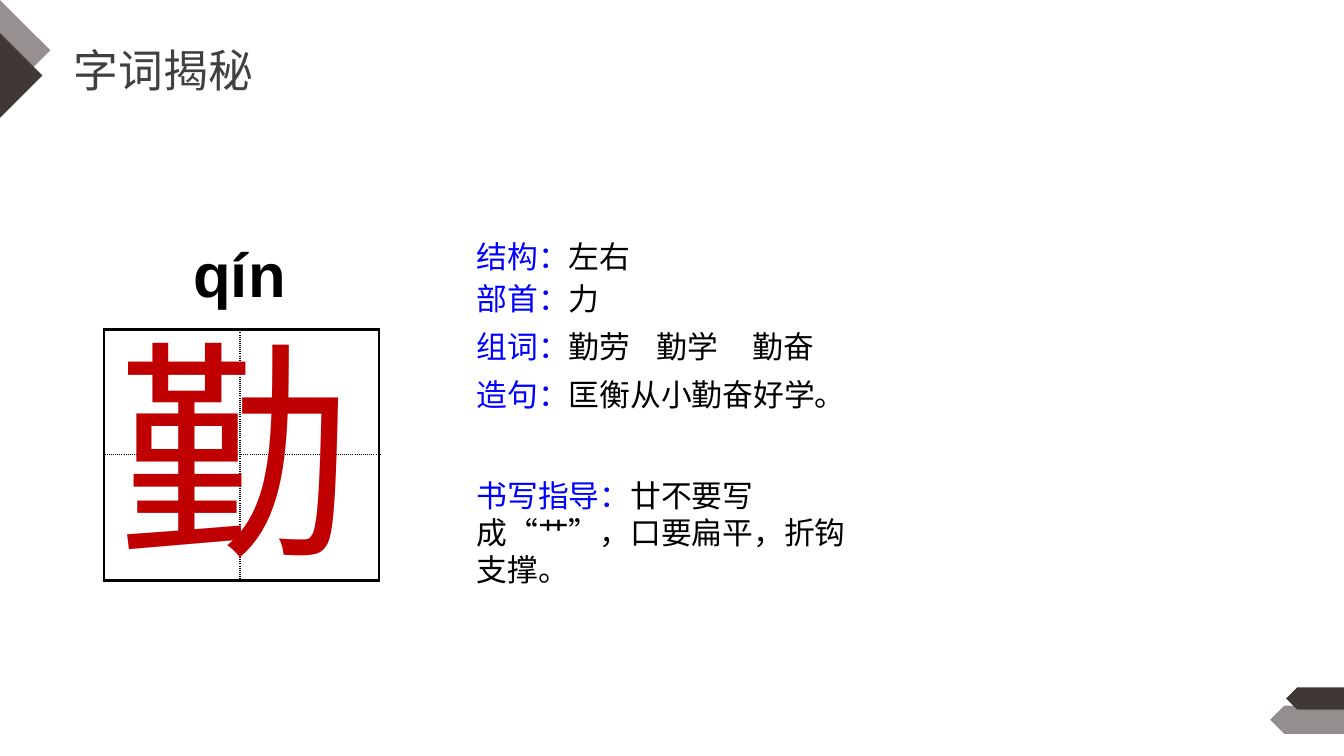
from lxml import etree
from pptx import Presentation, util as u
from pptx.dml.color import RGBColor
from pptx.enum import shapes, text
from pptx.oxml.ns import qn

DARK, GREY, BLUE, BLACK, RED = "403836", "404040", "0000FF", "000000", "C00000"


def colour(value):
    return RGBColor.from_string(value)


class Board:
    """Places elements on one slide; every length is a percentage of the slide's size."""

    font = "Arial"

    def __init__(self, presentation):
        self.width, self.height = presentation.slide_width, presentation.slide_height
        self.slide = presentation.slides.add_slide(presentation.slide_layouts[5])
        self.shapes = self.slide.shapes

    def x(self, share):
        return u.Emu(round(self.width * share / 100))

    def y(self, share):
        return u.Emu(round(self.height * share / 100))

    def box(self, left, top, width, height):
        return self.x(left), self.y(top), self.x(width), self.y(height)

    def paint(self, shape, fill, opacity=100):
        shape.shadow.inherit = False
        shape.fill.solid()
        shape.fill.fore_color.rgb = colour(fill)
        shape.line.fill.background()
        if opacity < 100:
            tone = shape.fill._xPr.find(".//" + qn("a:srgbClr"))
            etree.SubElement(tone, qn("a:alpha"), val=str(opacity * 1000))

    def ribbon(self, box, opacity=100):
        shape = self.shapes.add_shape(shapes.MSO_SHAPE.PENTAGON, *self.box(*box))
        shape.rotation = 180
        self.paint(shape, DARK, opacity)

    def corner(self, top, width, height, opacity=100):
        """Triangle on the left edge, pointing right."""
        builder = self.shapes.build_freeform(0, self.y(top + height))
        builder.add_line_segments(
            [(0, self.y(top)), (self.x(width), self.y(top + height / 2))], close=True)
        self.paint(builder.convert_to_shape(), DARK, opacity)

    def set_text(self, shape, runs, size, bold=False, wrap=True):
        """Fill a shape with one paragraph of (wording, colour) runs."""
        frame = shape.text_frame
        frame.word_wrap = wrap
        frame.vertical_anchor = text.MSO_ANCHOR.TOP
        paragraph = frame.paragraphs[0]
        paragraph.alignment = text.PP_ALIGN.LEFT
        font = paragraph.font
        font.name, font.size, font.bold = self.font, u.Pt(size), bold
        for wording, tone in runs:
            run = paragraph.add_run()
            run.text = wording
            run.font.color.rgb = colour(tone)
        return paragraph

    def title(self, box, wording):
        shape = self.shapes.title
        shape.left, shape.top, shape.width, shape.height = self.box(*box)
        self.set_text(shape, [(wording, GREY)], 32)

    def label(self, box, runs, size, **style):
        shape = self.shapes.add_textbox(*self.box(*box))
        return self.set_text(shape, runs, size, **style)

    def tabs(self, paragraph, stops):
        properties = paragraph._p.get_or_add_pPr()
        tab_list = etree.Element(qn("a:tabLst"))
        for stop in stops:
            etree.SubElement(tab_list, qn("a:tab"), pos=str(self.x(stop)), algn="l")
        properties.find(qn("a:defRPr")).addprevious(tab_list)

    def border(self, cell, side, width, dash):
        line = etree.SubElement(cell._tc.get_or_add_tcPr(), qn("a:ln" + side), w=str(u.Pt(width)))
        fill = etree.SubElement(line, qn("a:solidFill"))
        etree.SubElement(fill, qn("a:srgbClr"), val=BLACK)
        etree.SubElement(line, qn("a:prstDash"), val=dash)

    def writing_grid(self, left, top, columns, rows):
        """Practice square: solid outer edges, dotted inner ones."""
        box = self.box(left, top, sum(columns), sum(rows))
        table = self.shapes.add_table(len(rows), len(columns), *box).table
        table.first_row = table.horz_banding = False
        for column, width in zip(table.columns, columns):
            column.width = self.x(width)
        for row, height in zip(table.rows, rows):
            row.height = self.y(height)
        for r in range(len(rows)):
            for c in range(len(columns)):
                cell = table.cell(r, c)
                outer = {"L": c == 0, "R": c == len(columns) - 1,
                         "T": r == 0, "B": r == len(rows) - 1}
                for side, is_outer in outer.items():
                    self.border(cell, side, *((2.25, "solid") if is_outer else (1.5, "sysDot")))
                cell.fill.background()


def main():
    presentation = Presentation()
    presentation.slide_width, presentation.slide_height = u.Inches(13.33), u.Inches(7.5)
    board = Board(presentation)

    board.ribbon((94.5, 93.33, 5.55, 3.73), opacity=56)
    board.ribbon((95.7, 90.93, 4.35, 2.93))
    board.corner(0, 3.75, 13.33, opacity=55)
    board.corner(4.4, 3.15, 11.2)
    board.title((4.73, 4.93, 33.83, 8.53), "字词揭秘")

    facts = [
        (30.8, 6.27, "结构：", "左右"),
        (36.4, 6.27, "部首：", "力"),
        (42.67, 6.27, "组词：", "勤劳\t勤学\t勤奋"),
        (49.07, 6.27, "造句：", "匡衡从小勤奋好学。"),
        (62.4, 16.13, "书写指导：", "廿不要写成“艹”，口要扁平，折钩支撑。"),
    ]
    for top, height, heading, wording in facts:
        paragraph = board.label((34.73, top, 30.23, height),
                                [(heading, BLUE), (wording, BLACK)], 22)
        if "\t" in wording:
            board.tabs(paragraph, (13.4, 20.55))

    board.writing_grid(7.73, 43.6, (10.13, 10.35), (16.53, 16.67))
    board.label((8.1, 39.87, 18.98, 38.53), [("勤", RED)], 166, wrap=False)
    board.label((13.65, 30.53, 8.48, 11.2), [("qín", BLACK)], 44, bold=True, wrap=False)
    presentation.save("out.pptx")


if __name__ == "__main__":
    main()
